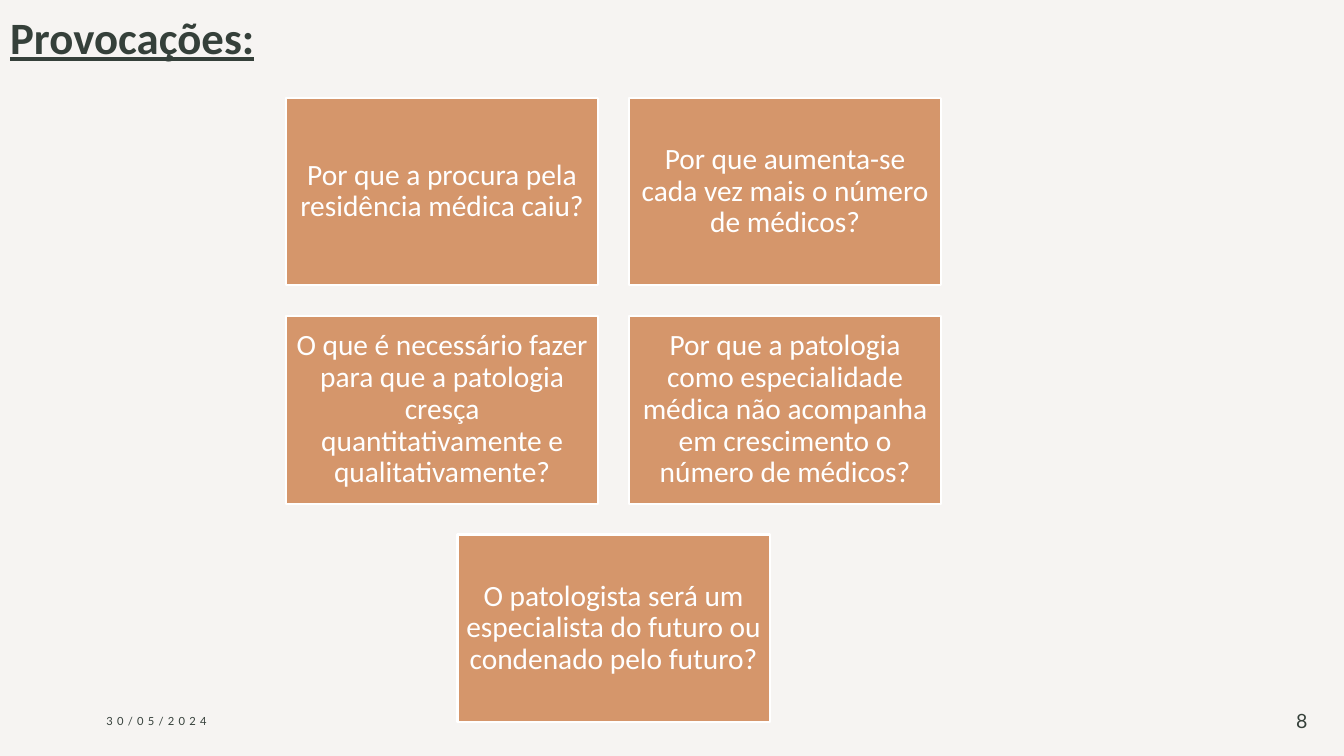
from pptx import Presentation
from pptx.dml.color import RGBColor
from pptx.enum.shapes import MSO_SHAPE
from pptx.enum.text import MSO_ANCHOR, MSO_AUTO_SIZE, PP_ALIGN
from pptx.util import Pt

RECT = MSO_SHAPE.RECTANGLE
MIDDLE, BOTTOM = MSO_ANCHOR.MIDDLE, MSO_ANCHOR.BOTTOM
LEFT, CENTER, RIGHT = PP_ALIGN.LEFT, PP_ALIGN.CENTER, PP_ALIGN.RIGHT
NO_FIT = MSO_AUTO_SIZE.NONE
TITLE_ONLY = 5

BACKGROUND, DARK, ORANGE, WHITE = "F6F4F2", "35403A", "D5966B", "FFFFFF"
HEADING_FONT, FOOTER_FONT = "Calibri", "Lato"


def color(value):
    return RGBColor.from_string(value)


class SlideBuilder:
    def __init__(self, prs):
        self.slide = prs.slides.add_slide(prs.slide_layouts[TITLE_ONLY])
        fill = self.slide.background.fill
        fill.solid()
        fill.fore_color.rgb = color(BACKGROUND)

    def set_text(self, sp, text, size, font, ink, align, anchor):
        tf = sp.text_frame
        tf.text = text
        tf.word_wrap = True
        tf.auto_size = NO_FIT
        tf.vertical_anchor = anchor
        p = tf.paragraphs[0]
        p.alignment = align
        r = p.runs[0]
        r.font.size = Pt(size)
        r.font.name = font
        r.font.color.rgb = color(ink)
        return p, r

    def title(self, text, x, y, w, h):
        sp = self.slide.shapes.title
        sp.left, sp.top, sp.width, sp.height = Pt(x), Pt(y), Pt(w), Pt(h)
        p, r = self.set_text(sp, text, 32, HEADING_FONT, DARK, LEFT, BOTTOM)
        r.font.bold = True
        r.font.underline = True

    def card(self, text, x, y, w, h):
        sp = self.slide.shapes.add_shape(RECT, Pt(x), Pt(y), Pt(w), Pt(h))
        sp.shadow.inherit = False
        sp.fill.solid()
        sp.fill.fore_color.rgb = color(ORANGE)
        sp.line.color.rgb = color(WHITE)
        sp.line.width = Pt(1.5)
        p, r = self.set_text(sp, text, 21, HEADING_FONT, WHITE, CENTER, MIDDLE)
        p.line_spacing = 0.9
        tf = sp.text_frame
        tf.margin_left = tf.margin_right = Pt(6.3)
        tf.margin_top = tf.margin_bottom = Pt(6.3)

    def footer(self, text, x, y, w, h, size, align, spacing=0):
        sp = self.slide.shapes.add_textbox(Pt(x), Pt(y), Pt(w), Pt(h))
        p, r = self.set_text(sp, text, size, FOOTER_FONT, DARK, align, MIDDLE)
        if spacing:
            # Letter spacing is stored in hundredths of a point
            r.font._element.set("spc", str(spacing * 100))


def main():
    prs = Presentation()
    prs.slide_width, prs.slide_height = Pt(960), Pt(540)
    s = SlideBuilder(prs)

    # Title
    s.title("Provocações:", 0, 0.7, 823, 48.3)

    # Question cards: rows of two, with the last one centred
    rows = [
        ["Por que a procura pela residência médica caiu?",
         "Por que aumenta-se cada vez mais o número de médicos?"],
        ["O que é necessário fazer para que a patologia cresça "
         "quantitativamente e qualitativamente?",
         "Por que a patologia como especialidade médica não acompanha "
         "em crescimento o número de médicos?"],
        ["O patologista será um especialista do futuro ou condenado "
         "pelo futuro?"],
    ]
    card_w, card_h, gap = 223, 134, 22
    center_x, top = 438.3, 69.8
    for i, questions in enumerate(rows):
        row_w = len(questions) * (card_w + gap) - gap
        for j, question in enumerate(questions):
            x = center_x - row_w / 2 + j * (card_w + gap)
            s.card(question, x, top + i * (card_h + gap), card_w, card_h)

    # Date and slide number
    s.footer("30/05/2024", 69, 500.5, 216, 28.8, 8, LEFT, spacing=3)
    s.footer("8", 900, 500.5, 41, 28.8, 14, RIGHT)

    prs.save("out.pptx")


if __name__ == "__main__":
    main()
